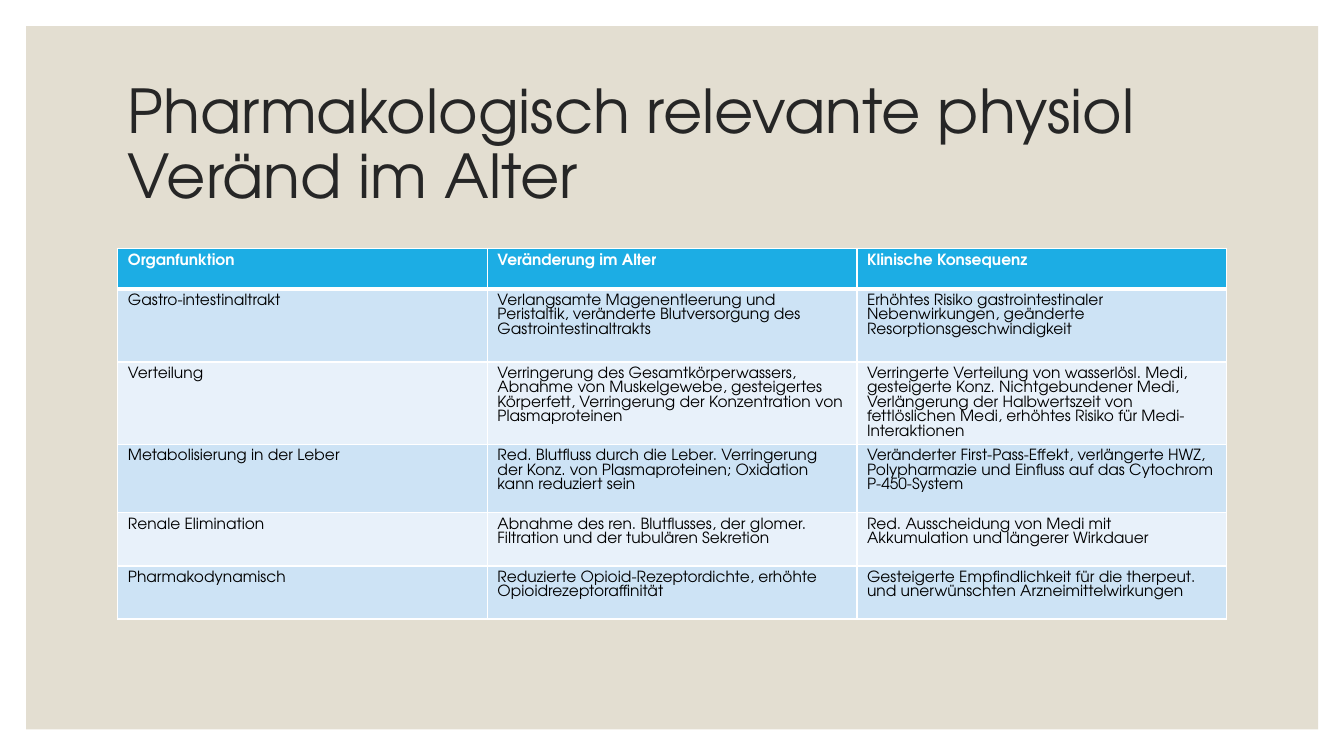
from lxml import etree
from pptx import Presentation
from pptx.dml.color import RGBColor
from pptx.enum import shapes, text
from pptx.oxml import ns
from pptx.util import Cm, Pt

FONT = "TeX Gyre Adventor"


def paint(target, color):
    target.solid()
    target.fore_color.rgb = RGBColor.from_string(color)


def write(frame, words, size, color, spacing, bold=False):
    frame.text = words
    paragraph = frame.paragraphs[0]
    paragraph.alignment = text.PP_ALIGN.LEFT
    paragraph.line_spacing = spacing
    font = paragraph.runs[0].font
    for name, value in {"name": FONT, "size": Pt(size), "bold": bold}.items():
        setattr(font, name, value)
    paint(font.fill, color)


deck = Presentation()
deck.slide_width, deck.slide_height = Cm(33.87), Cm(19.05)
slide = deck.slides.add_slide(deck.slide_layouts[5])

panel = slide.shapes.add_shape(
    shapes.MSO_SHAPE.RECTANGLE, Cm(0.66), Cm(0.66), Cm(32.56), Cm(17.72))
panel.shadow.inherit = False
paint(panel.fill, "E3DED1")
panel.line.fill.background()

heading = slide.shapes.title
panel.element.getparent().remove(panel.element)
heading.element.addprevious(panel.element)
box = {"left": 2.97, "top": 1.78, "width": 27.94, "height": 3.81}
for name, value in box.items():
    setattr(heading, name, Cm(value))
write(heading.text_frame, "Pharmakologisch relevante physiol Veränd im Alter", 43.2, "262626", 0.9)
frame_format = {
    "word_wrap": True,
    "auto_size": text.MSO_AUTO_SIZE.NONE,
    "vertical_anchor": text.MSO_ANCHOR.MIDDLE,
}
for name, value in frame_format.items():
    setattr(heading.text_frame, name, value)

changes = [
    ("Organfunktion", "Veränderung im Alter", "Klinische Konsequenz"),
    ("Gastro-intestinaltrakt",
     "Verlangsamte Magenentleerung und Peristaltik, veränderte Blutversorgung des Gastrointestinaltrakts",
     "Erhöhtes Risiko gastrointestinaler Nebenwirkungen, geänderte Resorptionsgeschwindigkeit"),
    ("Verteilung",
     "Verringerung des Gesamtkörperwassers, Abnahme von Muskelgewebe, gesteigertes Körperfett, "
     "Verringerung der Konzentration von Plasmaproteinen",
     "Verringerte Verteilung von wasserlösl. Medi, gesteigerte Konz. Nichtgebundener Medi, "
     "Verlängerung der Halbwertszeit von fettlöslichen Medi, erhöhtes Risiko für Medi-Interaktionen"),
    ("Metabolisierung in der Leber",
     "Red. Blutfluss durch die Leber. Verringerung der Konz. von Plasmaproteinen; "
     "Oxidation kann reduziert sein",
     "Veränderter First-Pass-Effekt, verlängerte HWZ, Polypharmazie und Einfluss auf das "
     "Cytochrom P-450-System"),
    ("Renale Elimination",
     "Abnahme des ren. Blutflusses, der glomer. Filtration und der tubulären Sekretion",
     "Red. Ausscheidung von Medi mit Akkumulation und längerer Wirkdauer"),
    ("Pharmakodynamisch",
     "Reduzierte Opioid-Rezeptordichte, erhöhte Opioidrezeptoraffinität",
     "Gesteigerte Empfindlichkeit für die therpeut. und unerwünschten Arzneimittelwirkungen"),
]
row_heights = [1.01, 1.84, 2.08, 1.72, 1.34, 1.34]

organ_table = slide.shapes.add_table(
    len(changes), 3, Cm(2.97), Cm(6.27), Cm(27.94), Cm(sum(row_heights))).table
for column in organ_table.columns:
    column.width = Cm(27.94 / 3)

for row, (entries, height) in enumerate(zip(changes, row_heights)):
    organ_table.rows[row].height = Cm(height)
    header = row == 0
    fill = "1CADE4" if header else ("E8F1FA", "CDE3F5")[row % 2]
    for col, entry in enumerate(entries):
        cell = organ_table.cell(row, col)
        write(cell.text_frame, entry, 11, "FFFFFF" if header else "000000", 1.0, header)
        paint(cell.fill, fill)
        properties = cell.fill._xPr
        for place, side in enumerate("LRTB"):
            thick = (header and side == "B") or (row == 1 and side == "T")
            border = etree.Element(ns.qn(f"a:ln{side}"), w=str(Pt(3 if thick else 1)))
            border_fill = etree.SubElement(border, ns.qn("a:solidFill"))
            etree.SubElement(border_fill, ns.qn("a:srgbClr"), val="FFFFFF")
            properties.insert(place, border)

deck.save("out.pptx")
